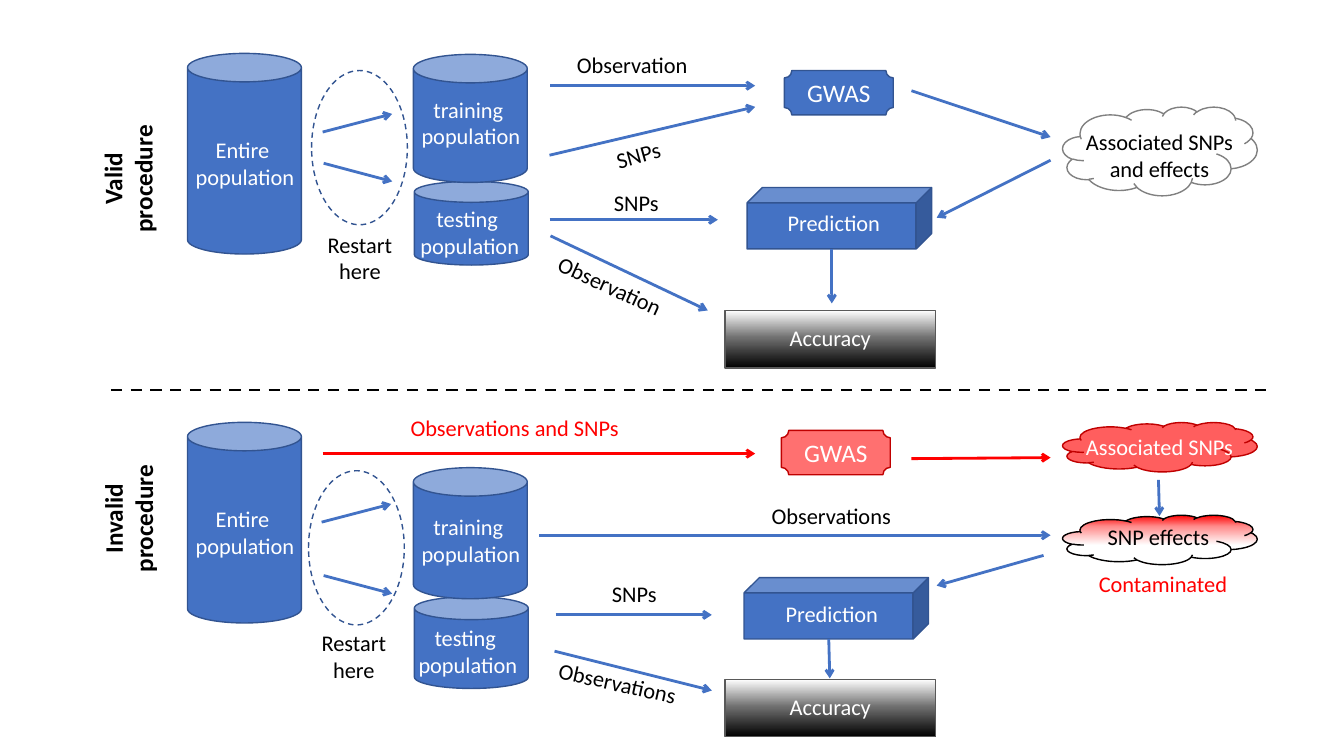
from dataclasses import dataclass

from lxml import etree
from pptx import Presentation
from pptx import util as u
from pptx.dml.color import RGBColor
from pptx.enum import dml, shapes, text
from pptx.oxml.ns import qn

COLORS = {
    "blue": "4472C4",
    "navy": "325491",
    "red": "FF0000",
    "dark red": "C00000",
    "pink": "FF8B8B",
    "white": "FFFFFF",
    "black": "000000",
    "gray": "808080",
    "mid gray": "6E6E6E",
    "dark gray": "595959",
}
GRADIENTS = {
    "steel": [(0, "white"), (48, "mid gray"), (100, "black")],
    "tainted": [(0, "red"), (23, "pink"), (61, "white"), (99, "white")],
}
FONT = "Calibri"
KIND = shapes.MSO_SHAPE
Box = tuple[float, float, float, float]
Point = tuple[float, float]


@dataclass
class Node:
    kind: int
    box: Box
    fill: str | None = "blue"
    line: str = "navy"
    opacity: int = 100
    dashed: bool = False
    words: str = ""


@dataclass
class Arrow:
    start: Point
    end: Point
    color: str = "blue"
    head: bool = True


@dataclass
class Label:
    words: str
    box: Box
    color: str = "black"
    size: int = 16
    bold: bool = False
    turn: float = 0


def rgb(name: str) -> RGBColor:
    return RGBColor.from_string(COLORS[name])


def write(frame, words: str, color: str, size: int, bold: bool = False) -> None:
    frame.word_wrap = True
    frame.text = words
    for paragraph in frame.paragraphs:
        paragraph.alignment = text.PP_ALIGN.CENTER
        paragraph.font.name = FONT
        paragraph.font.size = u.Pt(size)
        paragraph.font.bold = bold
        paragraph.font.color.rgb = rgb(color)


def paint_gradient(shape, stops: list[tuple[int, str]]) -> None:
    shape.fill.gradient()
    shape.fill.gradient_angle = 270
    stop_list = shape._element.spPr.find(f".//{qn('a:gsLst')}")
    for old_stop in list(stop_list):
        stop_list.remove(old_stop)
    for position, color in stops:
        stop = etree.SubElement(stop_list, qn("a:gs"), pos=str(position * 1000))
        etree.SubElement(stop, qn("a:srgbClr"), val=COLORS[color])


def draw_node(slide, node: Node) -> None:
    shape = slide.shapes.add_shape(node.kind, *map(u.Inches, node.box))
    shape.shadow.inherit = False
    shape.line.color.rgb = rgb(node.line)
    shape.line.width = u.Pt(1)
    if node.dashed:
        shape.line.dash_style = dml.MSO_LINE.DASH
    if node.fill is None:
        shape.fill.background()
    elif node.fill in GRADIENTS:
        paint_gradient(shape, GRADIENTS[node.fill])
    else:
        shape.fill.solid()
        shape.fill.fore_color.rgb = rgb(node.fill)
        if node.opacity < 100:
            tint = shape._element.spPr.find(f"{qn('a:solidFill')}/{qn('a:srgbClr')}")
            etree.SubElement(tint, qn("a:alpha"), val=str(node.opacity * 1000))
    if node.words:
        shape.text_frame.vertical_anchor = text.MSO_ANCHOR.MIDDLE
        write(shape.text_frame, node.words, "white", 18)


def draw_arrow(slide, arrow: Arrow) -> None:
    connector = slide.shapes.add_connector(
        shapes.MSO_CONNECTOR.STRAIGHT, *map(u.Inches, arrow.start + arrow.end))
    connector.line.color.rgb = rgb(arrow.color)
    connector.line.width = u.Pt(2)
    if arrow.head:
        etree.SubElement(connector.line._get_or_add_ln(), qn("a:tailEnd"), type="arrow")
    else:
        connector.line.dash_style = dml.MSO_LINE.DASH
    etree.SubElement(connector._element.spPr, qn("a:effectLst"))


def draw_label(slide, label: Label) -> None:
    box = slide.shapes.add_textbox(*map(u.Inches, label.box))
    box.rotation = label.turn
    write(box.text_frame, label.words, label.color, label.size, label.bold)
    box.text_frame.auto_size = text.MSO_AUTO_SIZE.SHAPE_TO_FIT_TEXT


def shared_nodes(top: float) -> list[Node]:
    return [
        Node(KIND.CAN, (1.86, top, 1.13, 1.99)),
        Node(KIND.RECTANGLE, (7.19, top + 2.55, 2.09, 0.57), "steel", "dark gray"),
    ]


def shared_labels(top: float, training: float, testing: Point,
                  prediction: Point, restart: Point) -> list[Label]:
    return [
        Label("Entire \npopulation", (1.58, top + 0.77, 1.7, 0.64), "white"),
        Label("training \npopulation", (3.82, training, 1.7, 0.64), "white"),
        Label("testing \npopulation", (*testing, 1.7, 0.64), "white"),
        Label("Prediction", (*prediction, 1.32, 0.37), "white"),
        Label("Accuracy", (7.19, top + 2.64, 2.09, 0.37), "white"),
        Label("Restart\nhere", (*restart, 1.06, 0.64)),
    ]


VALID_TOP, INVALID_TOP = 0.53, 4.19

NODES = [
    *shared_nodes(VALID_TOP),
    Node(KIND.CAN, (4.11, 1.8, 1.13, 0.83)),
    Node(KIND.CAN, (4.1, 0.54, 1.13, 1.27)),
    Node(KIND.OVAL, (3.09, 0.7, 0.95, 1.53), None, dashed=True),
    Node(KIND.PLAQUE, (7.78, 0.7, 1.08, 0.44), words="GWAS"),
    Node(KIND.CUBE, (7.41, 1.86, 1.83, 0.61)),
    Node(KIND.CLOUD, (10.54, 1.06, 1.93, 0.88), None, "gray"),
    *shared_nodes(INVALID_TOP),
    Node(KIND.CAN, (4.11, 5.92, 1.13, 0.91)),
    Node(KIND.CAN, (4.1, 4.64, 1.13, 1.3)),
    Node(KIND.OVAL, (3.06, 4.67, 0.95, 1.53), None, dashed=True),
    Node(KIND.PLAQUE, (7.75, 4.27, 1.08, 0.44), "red", "dark red", 56, words="GWAS"),
    Node(KIND.CUBE, (7.38, 5.73, 1.83, 0.61)),
    Node(KIND.CLOUD, (10.54, 4.19, 1.93, 0.49), "red", "dark red", 63),
    Node(KIND.CLOUD, (10.54, 5.11, 1.93, 0.49), "tainted", "black"),
]
ARROWS = [
    Arrow((3.2, 1.31), (3.89, 1.13)),
    Arrow((3.21, 1.62), (3.89, 1.8)),
    Arrow((5.46, 0.85), (7.49, 0.85)),
    Arrow((5.45, 1.54), (7.49, 1.06)),
    Arrow((5.45, 2.18), (7.12, 2.18)),
    Arrow((5.46, 2.34), (7.02, 3.08)),
    Arrow((9.04, 0.9), (10.42, 1.36)),
    Arrow((10.42, 1.59), (9.29, 2.16)),
    Arrow((8.25, 2.47), (8.25, 3.01)),
    Arrow((1.1, 3.87), (12.61, 3.87), "black", head=False),
    Arrow((3.19, 5.18), (3.88, 5)),
    Arrow((3.21, 5.71), (3.89, 5.89)),
    Arrow((3.2, 4.5), (7.49, 4.5), "red"),
    Arrow((9.04, 4.55), (10.42, 4.54), "red"),
    Arrow((11.49, 4.76), (11.5, 5.12)),
    Arrow((5.35, 5.31), (10.42, 5.31)),
    Arrow((10.35, 5.51), (9.29, 5.81)),
    Arrow((5.51, 6.1), (7.06, 6.1)),
    Arrow((5.5, 6.46), (7.06, 6.85)),
    Arrow((8.22, 6.34), (8.23, 6.73)),
]
LABELS = [
    Label("Valid procedure", (0.42, 1.42, 1.7, 0.71), size=18, bold=True, turn=270),
    *shared_labels(VALID_TOP, 0.9, (3.81, 1.99), (7.61, 2.03), (3.04, 2.24)),
    Label("Observation", (5.61, 0.46, 1.32, 0.37)),
    Label("SNPs", (5.79, 1.35, 1.08, 0.37), turn=344.4),
    Label("SNPs", (5.65, 1.83, 1.32, 0.37)),
    Label("Observation", (5.39, 2.65, 1.32, 0.37), turn=24.6),
    Label("Associated SNPs and effects", (10.65, 1.22, 1.7, 0.64)),
    Label("Invalid procedure", (0.3, 4.79, 1.95, 0.71), size=18, bold=True, turn=270),
    *shared_labels(INVALID_TOP, 5.04, (3.79, 6.14), (7.59, 5.9), (2.98, 6.19)),
    Label("Observations and SNPs", (3.89, 4.06, 2.43, 0.37), "red"),
    Label("Observations", (7.43, 4.93, 1.63, 0.37)),
    Label("SNPs", (5.63, 5.71, 1.32, 0.37)),
    Label("Observations", (5.42, 6.59, 1.41, 0.37), turn=12.6),
    Label("Associated SNPs", (10.65, 4.25, 1.7, 0.37), "white"),
    Label("SNP effects", (10.64, 5.14, 1.7, 0.37)),
    Label("Contaminated", (10.72, 5.61, 1.63, 0.37), "red"),
]


def main() -> None:
    deck = Presentation()
    deck.slide_width, deck.slide_height = u.Inches(13.33), u.Inches(7.5)
    slide = deck.slides.add_slide(deck.slide_layouts[6])
    for draw, items in ((draw_node, NODES), (draw_arrow, ARROWS), (draw_label, LABELS)):
        for item in items:
            draw(slide, item)
    deck.save("out.pptx")


if __name__ == "__main__":
    main()
